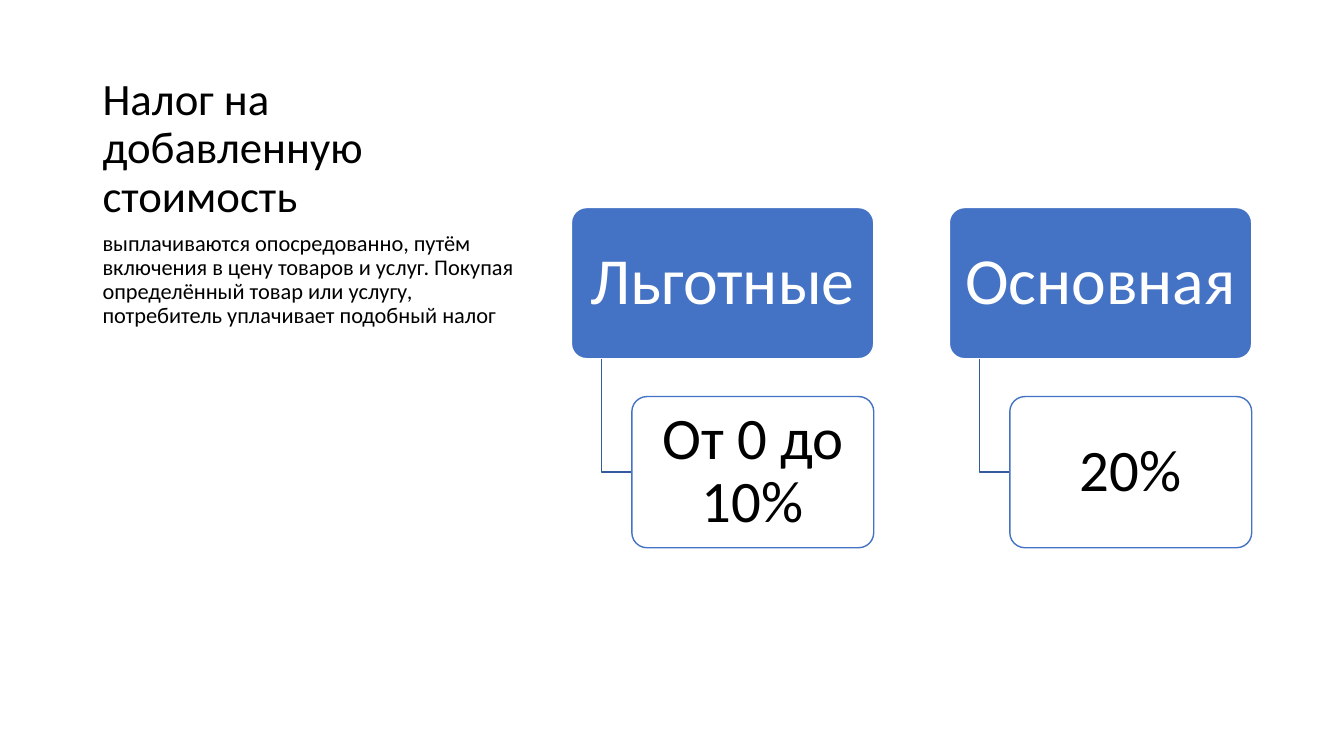
"""Builds a slide on value added tax with its reduced and main rates."""
from pptx import Presentation
from pptx.dml.color import RGBColor
from pptx.enum.shapes import MSO_SHAPE
from pptx.enum.text import MSO_ANCHOR as Anchor, MSO_AUTO_SIZE as AutoSize, PP_ALIGN as Align
from pptx.util import Cm, Pt

TITLE = "Налог на добавленную стоимость"
BODY = ("выплачиваются опосредованно, путём включения в цену товаров и услуг. "
        "Покупая определённый товар или услугу, потребитель уплачивает подобный налог")
RATES = [("Льготные", "От 0 до 10%"), ("Основная", "20%")]

COLORS = {"blue": "4472C4", "elbow": "365B9D", "white": "FFFFFF", "black": "000000"}
FONT = "Calibri"

TEXT_LEFT, TEXT_WIDTH = 2.33, 10.92
TREE_LEFT, TREE_TOP = 14.4, 5.23
HEAD_WIDTH, BOX_HEIGHT = 7.62, 3.81
PITCH = HEAD_WIDTH * 1.25
INDENT = HEAD_WIDTH / 5
RATE_TOP = TREE_TOP + BOX_HEIGHT * 1.25


def color(name):
    return RGBColor.from_string(COLORS[name])


def write(shape, text, size, ink, align, anchor):
    frame = shape.text_frame
    frame.word_wrap = True
    frame.auto_size = AutoSize.NONE
    frame.vertical_anchor = anchor
    para = frame.paragraphs[0]
    para.text = text
    para.alignment = align
    para.line_spacing = 0.9
    font = para.font
    font.name, font.size, font.bold = FONT, Pt(size), False
    font.color.rgb = color(ink)


def fill_placeholder(holder, top, height, text, size, anchor):
    holder.left, holder.top = Cm(TEXT_LEFT), Cm(top)
    holder.width, holder.height = Cm(TEXT_WIDTH), Cm(height)
    write(holder, text, size, "black", Align.LEFT, anchor)


def add_box(page, left, top, width, text, size, fill, line, ink):
    box = page.shapes.add_shape(MSO_SHAPE.ROUNDED_RECTANGLE,
                                Cm(left), Cm(top), Cm(width), Cm(BOX_HEIGHT))
    box.adjustments[0] = 0.1
    box.shadow.inherit = False
    box.fill.solid()
    box.fill.fore_color.rgb = color(fill)
    box.line.color.rgb = color(line)
    box.line.width = Pt(1)
    write(box, text, size, ink, Align.CENTER, Anchor.MIDDLE)


def add_elbow(page, left):
    start, end = Cm(left + INDENT / 2), Cm(left + INDENT)
    top, bottom = Cm(TREE_TOP + BOX_HEIGHT), Cm(RATE_TOP + BOX_HEIGHT / 2)
    builder = page.shapes.build_freeform(start, top)
    builder.add_line_segments([(start, bottom), (end, bottom)], close=False)
    elbow = builder.convert_to_shape()
    elbow.shadow.inherit = False
    elbow.fill.background()
    elbow.line.color.rgb = color("elbow")
    elbow.line.width = Pt(1)


def main():
    deck = Presentation()
    deck.slide_width, deck.slide_height = Cm(33.87), Cm(19.05)
    page = deck.slides.add_slide(deck.slide_layouts.get_by_name("Content with Caption"))
    unused = page.placeholders[1].element
    unused.getparent().remove(unused)

    fill_placeholder(page.shapes.title, 1.27, 4.45, TITLE, 32, Anchor.BOTTOM)
    body = page.placeholders[2]
    fill_placeholder(body, 5.72, 10.58, BODY, 16, Anchor.TOP)
    body.text_frame.paragraphs[0].space_before = Pt(10)

    for index, (kind, rate) in enumerate(RATES):
        left = TREE_LEFT + index * PITCH
        add_box(page, left, TREE_TOP, HEAD_WIDTH, kind, 47, "blue", "white", "white")
        add_elbow(page, left)
        add_box(page, left + INDENT, RATE_TOP, HEAD_WIDTH - INDENT,
                rate, 42, "white", "blue", "black")

    deck.save("out.pptx")


if __name__ == "__main__":
    main()
